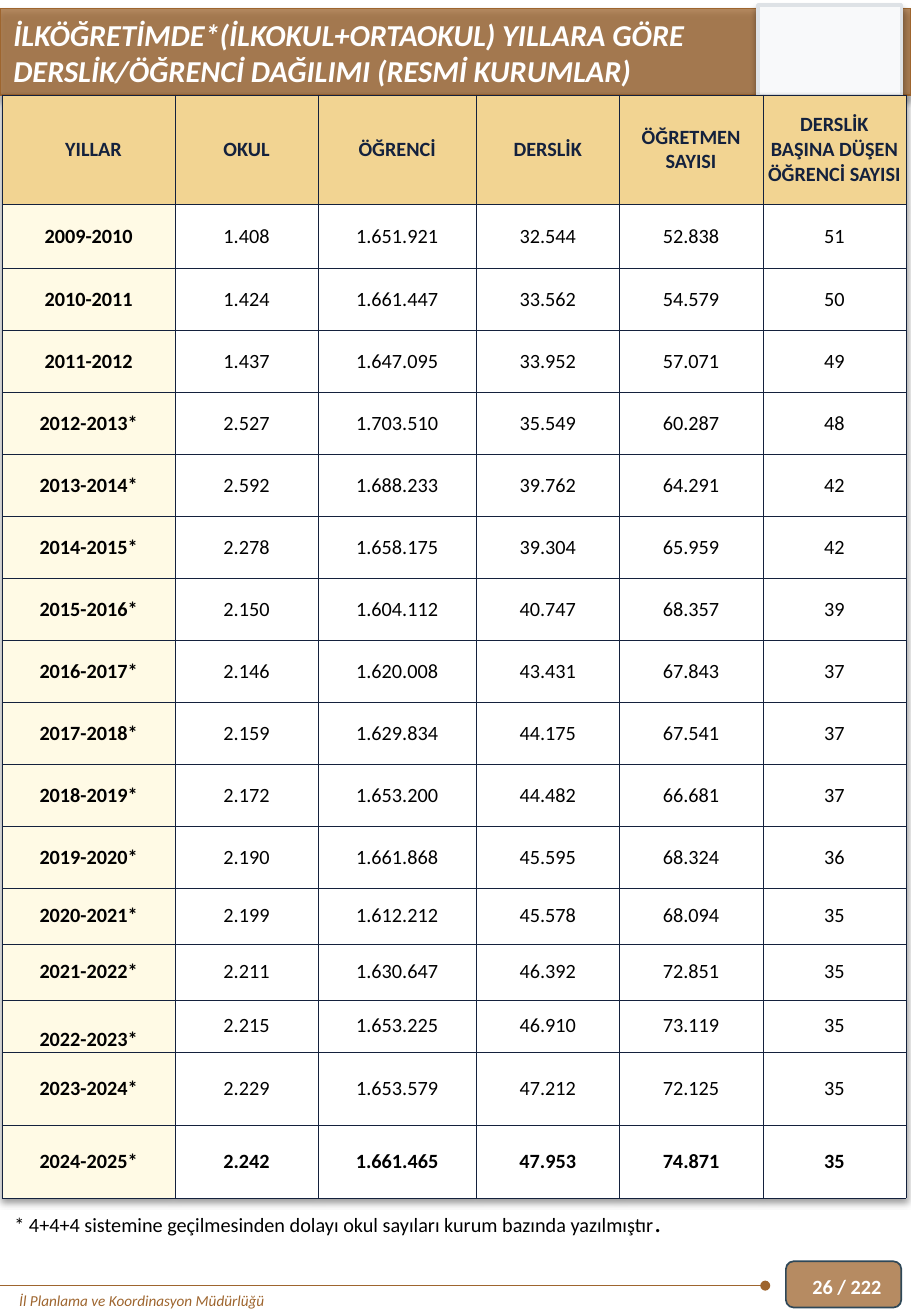
"""Builds a slide with a table of schools, pupils, classrooms and teachers by year."""
import lxml.etree
import pptx
import pptx.dml.color
import pptx.enum.shapes
import pptx.enum.text
import pptx.oxml
import pptx.oxml.ns
import pptx.util

PX = 9144
RGB = pptx.dml.color.RGBColor
BROWN = RGB(0x9E, 0x65, 0x2E)
SLATE = RGB(0x2F, 0x48, 0x58)
NAVY = RGB(0x14, 0x21, 0x3D)
SAND = RGB(0xF2, 0xD4, 0x92)
CREAM = RGB(0xFF, 0xFA, 0xE5)
PALE = RGB(0xF8, 0xF9, 0xFA)
GREY = RGB(0xDE, 0xE2, 0xE6)
WHITE = RGB(0xFF, 0xFF, 0xFF)
BLACK = RGB(0, 0, 0)
qn = pptx.oxml.ns.qn
Pt = pptx.util.Pt
SHAPE = pptx.enum.shapes.MSO_SHAPE
ALIGN = pptx.enum.text.PP_ALIGN
ANCHOR = pptx.enum.text.MSO_ANCHOR
NS = pptx.oxml.ns.nsdecls("a")

HEADS = ("YILLAR", "OKUL", "ÖĞRENCİ", "DERSLİK", "ÖĞRETMEN\nSAYISI",
         "DERSLİK BAŞINA DÜŞEN ÖĞRENCİ SAYISI")
DATA = (
    ("1.408", "1.651.921", "32.544", "52.838", "51"),
    ("1.424", "1.661.447", "33.562", "54.579", "50"),
    ("1.437", "1.647.095", "33.952", "57.071", "49"),
    ("2.527", "1.703.510", "35.549", "60.287", "48"),
    ("2.592", "1.688.233", "39.762", "64.291", "42"),
    ("2.278", "1.658.175", "39.304", "65.959", "42"),
    ("2.150", "1.604.112", "40.747", "68.357", "39"),
    ("2.146", "1.620.008", "43.431", "67.843", "37"),
    ("2.159", "1.629.834", "44.175", "67.541", "37"),
    ("2.172", "1.653.200", "44.482", "66.681", "37"),
    ("2.190", "1.661.868", "45.595", "68.324", "36"),
    ("2.199", "1.612.212", "45.578", "68.094", "35"),
    ("2.211", "1.630.647", "46.392", "72.851", "35"),
    ("2.215", "1.653.225", "46.910", "73.119", "35"),
    ("2.229", "1.653.579", "47.212", "72.125", "35"),
    ("2.242", "1.661.465", "47.953", "74.871", "35"),
)
COLS = (142, 118, 130, 118, 118, 118)
ROWS = (90, 53) + (51,) * 10 + (46, 46, 43, 60, 60)


def cast(effects):
    """Add a soft shadow below to an effect list."""
    effects.append(pptx.oxml.parse_xml(
        f'<a:outerShdw {NS} blurRad="{Pt(4)}" dist="{Pt(3)}" dir="5400000" algn="t" '
        'rotWithShape="0"><a:srgbClr val="000000"><a:alpha val="40000"/></a:srgbClr></a:outerShdw>'))


def style(frame, size, color, bold=False, slant=False):
    """Format every run of a text frame."""
    for para in frame.paragraphs:
        for run in para.runs:
            font = run.font
            font.name, font.size = "Calibri", Pt(size)
            font.bold, font.italic = bold, slant
            font.color.rgb = color


deck = pptx.Presentation()
deck.slide_width, deck.slide_height = 750 * PX, 1083 * PX
slide = deck.slides.add_slide(deck.slide_layouts[5])
shapes = slide.shapes

for kind, box, fill, edge, width, clear, deep in (
    (SHAPE.ROUNDED_RECTANGLE, (647, 1038, 95, 38), BROWN, SLATE, 1, True, False),
    (SHAPE.RECTANGLE, (0, 7, 750, 71), BROWN, BROWN, 1, True, True),
    (SHAPE.RECTANGLE, (624, 4, 118, 75), PALE, GREY, 2, False, True),
):
    panel = shapes.add_shape(kind, *(n * PX for n in box))
    panel.fill.solid()
    panel.fill.fore_color.rgb = fill
    panel.line.color.rgb = edge
    panel.line.width = Pt(width)
    panel.shadow.inherit = False
    if clear:
        tint = panel.element.spPr.find(qn("a:solidFill"))[0]
        lxml.etree.SubElement(tint, qn("a:alpha"), val="75000")
    if deep:
        cast(panel.element.spPr.find(qn("a:effectLst")))

rule = shapes.add_connector(pptx.enum.shapes.MSO_CONNECTOR.STRAIGHT,
                            630 * PX, 1058 * PX, 0, 1058 * PX)
rule.line.color.rgb = BROWN
rule.line.width = Pt(0.5)
lxml.etree.SubElement(rule.line._get_or_add_ln(), qn("a:headEnd"), type="oval")
lxml.etree.SubElement(rule.element.spPr, qn("a:effectLst"))

grid = shapes.add_table(len(ROWS), len(COLS), 2 * PX, 78 * PX, sum(COLS) * PX, sum(ROWS) * PX)
table = grid.table
table.horz_banding = False
props = grid.element.find(".//" + qn("a:tblPr"))
glow = pptx.oxml.parse_xml(f"<a:effectLst {NS}/>")
cast(glow)
props.insert(0, glow)
for col, width in zip(table.columns, COLS):
    col.width = width * PX
for row, height in zip(table.rows, ROWS):
    row.height = height * PX

years = [f"{y}-{y + 1}" + "*" * (y >= 2012) for y in range(2009, 2009 + len(DATA))]
lines = [HEADS] + [(year, *vals) for year, vals in zip(years, DATA)]
for r, line in enumerate(lines):
    for c, text in enumerate(line):
        cell = table.cell(r, c)
        cell.text = text
        side = 1 if r else 4
        cell.margin_left = cell.margin_right = side * PX
        cell.margin_top = cell.margin_bottom = 0
        cell.vertical_anchor = ANCHOR.MIDDLE
        cell.fill.solid()
        cell.fill.fore_color.rgb = SAND if r == 0 else CREAM if c == 0 else WHITE
        style(cell.text_frame, 12, BLACK if r else NAVY, r in (0, len(DATA)) or c == 0)
        for para in cell.text_frame.paragraphs:
            para.alignment = ALIGN.CENTER
        edges = cell._tc.get_or_add_tcPr()
        for spot, name in enumerate(("lnL", "lnR", "lnT", "lnB")):
            edges.insert(spot, pptx.oxml.parse_xml(
                f'<a:{name} {NS} w="{Pt(0.25)}"><a:solidFill><a:srgbClr val="{NAVY}"/>'
                f'</a:solidFill></a:{name}>'))
table.cell(0, 0).margin_left = 12 * PX
table.cell(14, 0).vertical_anchor = ANCHOR.BOTTOM

title = shapes.title
title.left, title.top, title.width, title.height = (n * PX for n in (1, 8, 747, 71))
title.text_frame.text = ("İLKÖĞRETİMDE*(İLKOKUL+ORTAOKUL) YILLARA GÖRE\n"
                         "DERSLİK/ÖĞRENCİ DAĞILIMI (RESMİ KURUMLAR)")
title.text_frame.vertical_anchor = ANCHOR.TOP
title.text_frame.auto_size = pptx.enum.text.MSO_AUTO_SIZE.NONE
style(title.text_frame, 18, WHITE, True, True)
for para in title.text_frame.paragraphs:
    para.alignment = ALIGN.LEFT
title.element.getparent().append(title.element)

for box, text, size, color, bold, slant, anchor in (
    ((6, 1058, 469, 25), "İl Planlama ve Koordinasyon Müdürlüğü", 9, BROWN, False, True, ANCHOR.TOP),
    ((2, 987, 748, 37), "* 4+4+4 sistemine geçilmesinden dolayı okul sayıları kurum bazında yazılmıştır",
     12, BLACK, False, False, ANCHOR.TOP),
    ((659, 1038, 115, 42), "26 / 222", 12, WHITE, True, False, ANCHOR.MIDDLE),
):
    frame = shapes.add_textbox(*(n * PX for n in box)).text_frame
    frame.word_wrap = True
    frame.vertical_anchor = anchor
    frame.text = text
    if text.startswith("*"):
        frame.paragraphs[0].alignment = ALIGN.JUSTIFY
        frame.paragraphs[0].add_run().text = "."
    style(frame, size, color, bold, slant)
    if text.startswith("*"):
        frame.paragraphs[0].runs[1].font.size = Pt(16)

deck.save("out.pptx")
